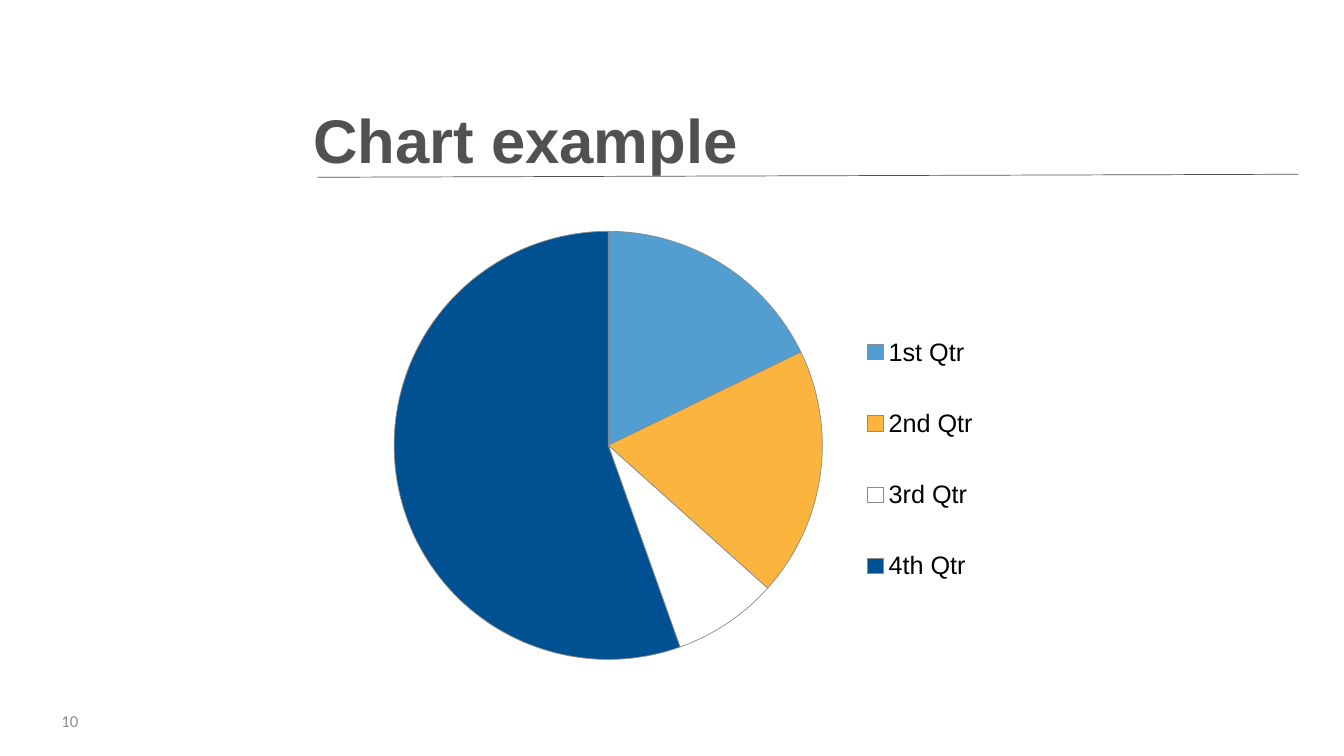
"""Build a slide with a quarterly pie chart under a ruled title."""
from dataclasses import dataclass

from lxml import etree
from pptx import Presentation
from pptx.chart.data import CategoryChartData
from pptx.dml.color import RGBColor
from pptx.enum.chart import XL_CHART_TYPE, XL_LEGEND_POSITION
from pptx.enum.shapes import MSO_CONNECTOR
from pptx.enum.text import MSO_ANCHOR
from pptx.oxml.ns import qn
from pptx.util import Inches, Pt

PIE = XL_CHART_TYPE.PIE
LEGEND_RIGHT = XL_LEGEND_POSITION.RIGHT
STRAIGHT = MSO_CONNECTOR.STRAIGHT
BOTTOM, MIDDLE = MSO_ANCHOR.BOTTOM, MSO_ANCHOR.MIDDLE

WIDTH, HEIGHT = Inches(13.33), Inches(7.5)
COLUMNS, ROWS = 40, 20
COLOURS = {
    "ink": "515151", "number": "8C8C8C", "legend": "000000", "edge": "8C8C8C",
    "sky": "539ED0", "amber": "FBB43E", "white": "FFFFFF", "navy": "005191",
}


@dataclass(frozen=True)
class Area:
    left: float
    top: float
    width: float
    height: float

    def lengths(self) -> tuple[int, int, int, int]:
        return (across(self.left), down(self.top), across(self.width), down(self.height))


@dataclass(frozen=True)
class Label:
    words: str
    area: Area
    anchor: MSO_ANCHOR
    font: str
    size: int
    colour: str
    bold: bool = False
    spacing: float = 1.0


@dataclass(frozen=True)
class Quarter:
    name: str
    value: int
    colour: str


LABELS = (
    Label("Chart example", Area(9.03, 1.44, 28.2, 3.36), BOTTOM, "Arial", 44, "ink", True, 0.9),
    Label("10", Area(1.53, 18.53, 9, 1.07), MIDDLE, "Calibri", 12, "number"),
)
QUARTERS = (
    Quarter("1st Qtr", 18, "sky"),
    Quarter("2nd Qtr", 19, "amber"),
    Quarter("3rd Qtr", 8, "white"),
    Quarter("4th Qtr", 56, "navy"),
)
CHART_AREA = Area(8.1, 5.76, 23.82, 12.05)
PIE_SHARE = Area(0.15, 0.03, 0.54, 0.94)
LEGEND_SHARE = Area(0.73, 0.17, 0.16, 0.72)


def across(columns: float) -> int:
    return round(WIDTH * columns / COLUMNS)


def down(rows: float) -> int:
    return round(HEIGHT * rows / ROWS)


def colour_of(name: str) -> RGBColor:
    return RGBColor.from_string(COLOURS[name])


def add_label(page, label: Label) -> None:
    box = page.shapes.add_textbox(*label.area.lengths())
    frame = box.text_frame
    frame.word_wrap = True
    frame.vertical_anchor = label.anchor
    para = frame.paragraphs[0]
    para.line_spacing = label.spacing
    span = para.add_run()
    span.text = label.words
    span.font.name = label.font
    span.font.size = Pt(label.size)
    span.font.bold = label.bold
    span.font.color.rgb = colour_of(label.colour)


def add_title_rule(page) -> None:
    rule = page.shapes.add_connector(
        STRAIGHT, across(9.45), down(4.69), across(38.64), down(4.61))
    rule.line.color.rgb = colour_of("ink")
    rule.line.width = Pt(0.5)
    etree.SubElement(rule.element.spPr, qn("a:effectLst"))


def make_layout(share: Area, inner: bool):
    layout = etree.Element(qn("c:layout"))
    manual = etree.SubElement(layout, qn("c:manualLayout"))
    settings = [("layoutTarget", "inner")] if inner else []
    settings += [("xMode", "edge"), ("yMode", "edge"), ("x", share.left),
                 ("y", share.top), ("w", share.width), ("h", share.height)]
    for tag, value in settings:
        etree.SubElement(manual, qn(f"c:{tag}")).set("val", str(value))
    return layout


def place_chart_parts(chart) -> None:
    plot_area = chart.element.find(f".//{qn('c:plotArea')}")
    legend = chart.element.find(f".//{qn('c:legend')}")
    for part in (plot_area, legend):
        for old in part.findall(qn("c:layout")):
            part.remove(old)
    plot_area.insert(0, make_layout(PIE_SHARE, True))
    legend.find(qn("c:legendPos")).addnext(make_layout(LEGEND_SHARE, False))


def add_quarter_pie(page) -> None:
    data = CategoryChartData()
    data.categories = [quarter.name for quarter in QUARTERS]
    data.add_series("Series 1", [quarter.value for quarter in QUARTERS])
    chart = page.shapes.add_chart(PIE, *CHART_AREA.lengths(), data).chart
    chart.has_title = False
    chart.font.name = "Calibri"
    chart.font.size = Pt(18)
    chart.has_legend = True
    chart.legend.position = LEGEND_RIGHT
    chart.legend.include_in_layout = False
    chart.legend.font.name = "Arial"
    chart.legend.font.size = Pt(18)
    chart.legend.font.color.rgb = colour_of("legend")
    plot = chart.plots[0]
    plot.vary_by_categories = True
    for index, quarter in enumerate(QUARTERS):
        style = plot.series[0].points[index].format
        style.fill.solid()
        style.fill.fore_color.rgb = colour_of(quarter.colour)
        style.line.color.rgb = colour_of("edge")
        style.line.width = Pt(0.5)
    place_chart_parts(chart)


def main() -> None:
    deck = Presentation()
    deck.slide_width, deck.slide_height = WIDTH, HEIGHT
    page = deck.slides.add_slide(deck.slide_layouts[6])
    add_title_rule(page)
    add_quarter_pie(page)
    for label in LABELS:
        add_label(page, label)
    deck.save("out.pptx")


if __name__ == "__main__":
    main()
